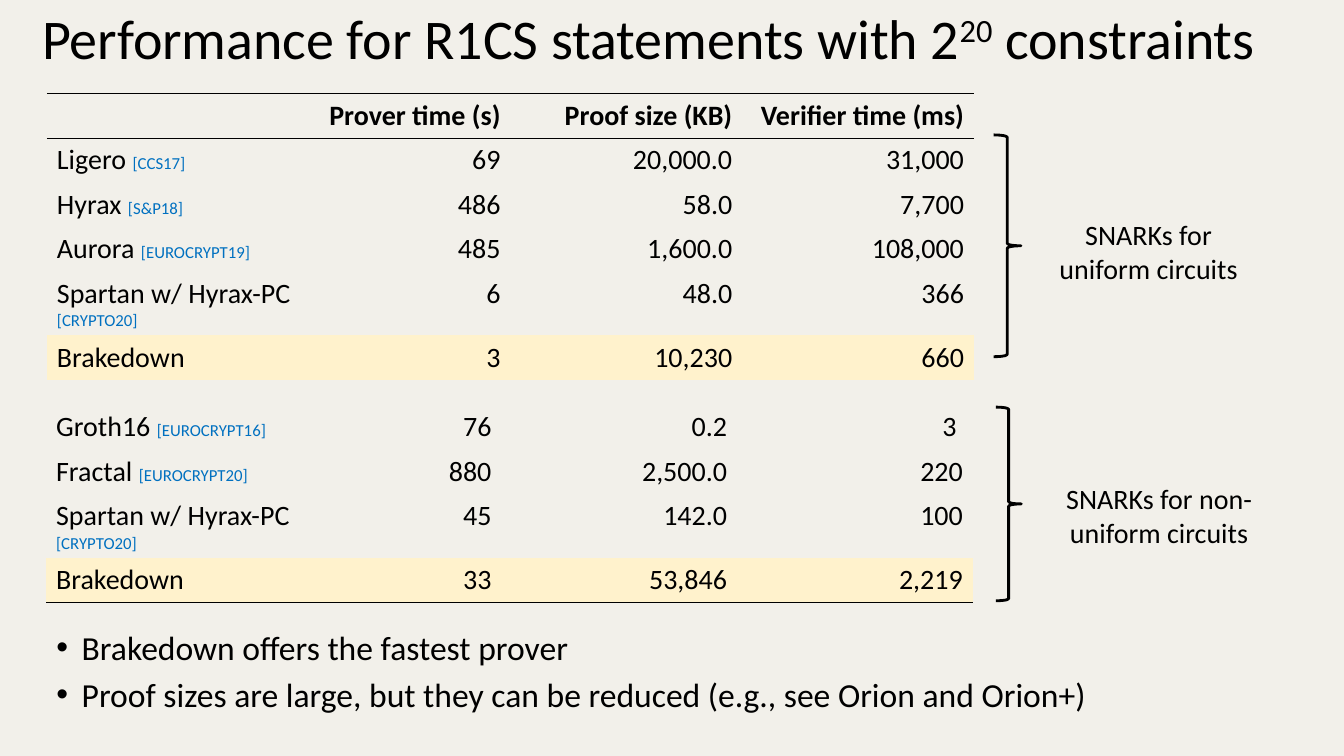
from lxml import etree
from pptx import Presentation
from pptx.dml.color import RGBColor
from pptx.enum.shapes import MSO_SHAPE as SHAPE
from pptx.enum.text import MSO_ANCHOR as ANCHOR, PP_ALIGN as ALIGN
from pptx.oxml import parse_xml
from pptx.oxml.ns import nsdecls, qn
from pptx.util import Cm, Pt

COLORS = {"bg": "F2F0EA", "ink": "000000", "cite": "0070C0", "ours": "FFF2CC"}
FONT = "Calibri"
NO_GRID_STYLE = "{2D5ABB26-0587-4C30-8999-92F81FD0307C}"
ROW_HEIGHT = 1.12

HEADER = ("", "", "Prover time (s)", "Proof size (KB)", "Verifier time (ms)")
UNIFORM = [
    ("Ligero ", "[CCS17]", "69", "20,000.0", "31,000"),
    ("Hyrax ", "[S&P18]", "486", "58.0", "7,700"),
    ("Aurora ", "[EUROCRYPT19]", "485", "1,600.0", "108,000"),
    ("Spartan w/ Hyrax-PC ", "[CRYPTO20]", "6", "48.0", "366"),
    ("Brakedown", "", "3", "10,230", "660"),
]
NON_UNIFORM = [
    ("Groth16 ", "[EUROCRYPT16]", "76", "0.2", "3 "),
    ("Fractal ", "[EUROCRYPT20]", "880", "2,500.0", "220"),
    ("Spartan w/ Hyrax-PC ", "[CRYPTO20]", "45", "142.0", "100"),
    ("Brakedown", "", "33", "53,846", "2,219"),
]
TAKEAWAYS = [
    "Brakedown offers the fastest prover",
    "Proof sizes are large, but they can be reduced (e.g., see Orion and Orion+)",
]


def rgb(name):
    return RGBColor.from_string(COLORS[name])


def add_run(p, text, size, color="ink", bold=False):
    r = p.add_run()
    r.text = text
    r.font.name, r.font.size, r.font.bold = FONT, Pt(size), bold
    r.font.color.rgb = rgb(color)
    return r


def add_text_frame(s, box):
    tf = s.shapes.add_textbox(*map(Cm, box)).text_frame
    tf.word_wrap = True
    return tf


def add_title(s, box):
    tf = add_text_frame(s, box)
    tf.vertical_anchor = ANCHOR.MIDDLE
    p = tf.paragraphs[0]
    p.line_spacing = 0.9
    add_run(p, "Performance for R1CS statements with 2", 40)
    exponent = add_run(p, "20", 40)
    exponent.font._element.set("baseline", "30000")
    add_run(p, " constraints", 40)


def add_rule(cell, side):
    """Draw a thin line on the top (T) or bottom (B) edge of a cell."""
    cell._tc.get_or_add_tcPr().append(parse_xml(
        f'<a:ln{side} {nsdecls("a")} w="12700"><a:solidFill>'
        f'<a:srgbClr val="{COLORS["ink"]}"/></a:solidFill></a:ln{side}>'))


def add_results(s, left, top, widths, rows, ruled):
    """Place a results table; ruled maps a row index to its ruled sides."""
    frame = s.shapes.add_table(len(rows), len(widths), Cm(left), Cm(top),
                               Cm(sum(widths)), Cm(ROW_HEIGHT * len(rows)))
    table = frame.table
    table.first_row = table.horz_banding = False
    table._tbl.tblPr.find(qn("a:tableStyleId")).text = NO_GRID_STYLE
    for column, width in zip(table.columns, widths):
        column.width = Cm(width)
    for i, (name, cite, *values) in enumerate(rows):
        table.rows[i].height = Cm(ROW_HEIGHT)
        for j, text in enumerate([name, *values]):
            cell = table.cell(i, j)
            for side in ruled.get(i, ""):
                add_rule(cell, side)
            if name == "Brakedown":
                cell.fill.solid()
                cell.fill.fore_color.rgb = rgb("ours")
            else:
                cell.fill.background()
            p = cell.text_frame.paragraphs[0]
            p.alignment = ALIGN.RIGHT if j else ALIGN.LEFT
            if text:
                add_run(p, text, 20, bold=not name)
            if cite and j == 0:
                add_run(p, cite, 12, "cite")


def add_brace(s, box, label_box, lines):
    brace = s.shapes.add_shape(SHAPE.RIGHT_BRACE, *map(Cm, box))
    brace.shadow.inherit = False
    brace.fill.background()
    brace.line.color.rgb = rgb("ink")
    brace.line.width = Pt(2)
    tf = add_text_frame(s, label_box)
    for i, line in enumerate(lines):
        p = tf.add_paragraph() if i else tf.paragraphs[0]
        p.alignment = ALIGN.CENTER
        add_run(p, line, 20)


def add_takeaways(s, box):
    tf = add_text_frame(s, box)
    for i, line in enumerate(TAKEAWAYS):
        p = tf.add_paragraph() if i else tf.paragraphs[0]
        pPr = p._p.get_or_add_pPr()
        pPr.set("marL", str(Cm(0.64)))
        pPr.set("indent", str(-Cm(0.64)))
        etree.SubElement(pPr, qn("a:buFont")).set("typeface", "Arial")
        etree.SubElement(pPr, qn("a:buChar")).set("char", "•")
        p.line_spacing = 0.8
        if i:
            p.space_before = Pt(10)
        add_run(p, line, 24)


def main():
    prs = Presentation()
    prs.slide_width, prs.slide_height = Cm(33.87), Cm(19.05)
    s = prs.slides.add_slide(prs.slide_layouts[6])
    s.background.fill.solid()
    s.background.fill.fore_color.rgb = rgb("bg")

    add_title(s, (0.81, -0.03, 32.26, 2.13))
    add_results(s, 1.18, 2.36, (6.71, 4.98, 5.84, 5.84),
                [HEADER, *UNIFORM], {0: "TB"})
    add_results(s, 1.16, 10.21, (6.6, 4.88, 5.94, 5.94),
                NON_UNIFORM, {len(NON_UNIFORM) - 1: "B"})
    add_brace(s, (25.04, 3.4, 0.69, 5.59), (25.02, 5.36, 7.85, 1.96),
              ["SNARKs for", "uniform circuits"])
    add_brace(s, (25.1, 10.26, 0.64, 4.88), (26.34, 12.01, 5.74, 1.96),
              ["SNARKs for non-uniform circuits"])
    add_takeaways(s, (1.17, 15.88, 31.88, 2.39))
    prs.save("out.pptx")


if __name__ == "__main__":
    main()
